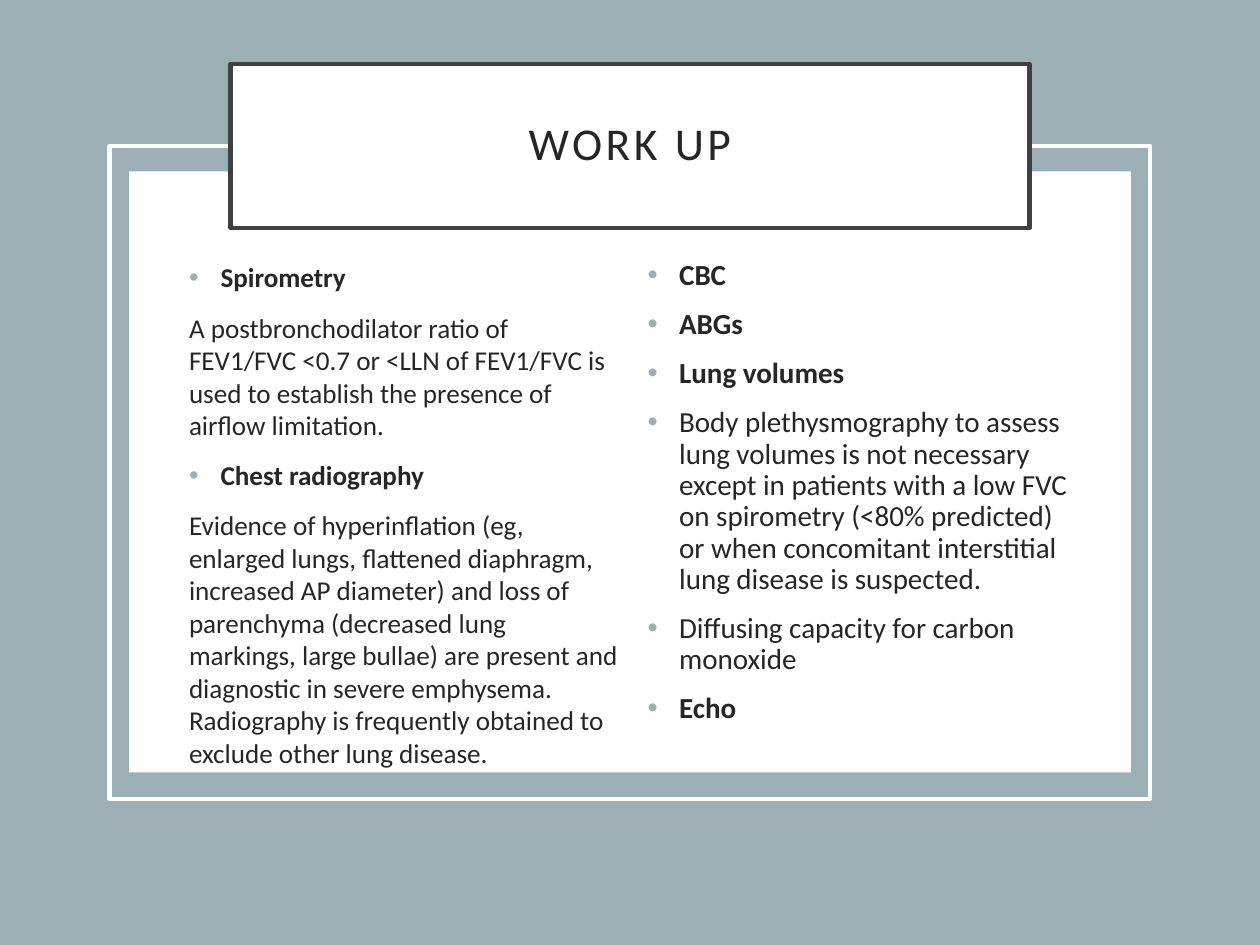
from lxml.etree import SubElement
from pptx import Presentation
from pptx.dml.color import RGBColor
from pptx.enum.shapes import MSO_SHAPE
from pptx.enum.text import MSO_ANCHOR, MSO_AUTO_SIZE, PP_ALIGN
from pptx.oxml.ns import qn
from pptx.util import Inches, Pt

COLORS = {"slate": "9BAFB5", "white": "FFFFFF", "border": "404040", "ink": "262626"}
FONT = "Calibri"
WIDTH, HEIGHT = 10, 7.5
TITLE = "WORK UP"
COLUMNS = [
    {"size": 15.5, "spacing": 1.0, "items": [
        ("Spirometry", True, True),
        ("A postbronchodilator ratio of FEV1/FVC <0.7 or <LLN of FEV1/FVC is used to "
         "establish the presence of airflow limitation.", False, False),
        ("Chest radiography", True, True),
        ("Evidence of hyperinflation (eg, enlarged lungs, flattened diaphragm, increased AP "
         "diameter) and loss of parenchyma (decreased lung markings, large bullae) are present "
         "and diagnostic in severe emphysema. Radiography is frequently obtained to exclude "
         "other lung disease.", False, False),
    ]},
    {"size": 16.6, "spacing": 0.9, "items": [
        ("CBC", True, True),
        ("ABGs", True, True),
        ("Lung volumes", True, True),
        ("Body plethysmography to assess lung volumes is not necessary except in patients with "
         "a low FVC on spirometry (<80% predicted) or when concomitant interstitial lung "
         "disease is suspected.", False, True),
        ("Diffusing capacity for carbon monoxide", False, True),
        ("Echo", True, True),
    ]},
]
COLUMN_LEFT, COLUMN_TOP, COLUMN_WIDTH, COLUMN_HEIGHT, GUTTER = 1.4, 2.02, 3.6, 4.12, 0.04
PANELS = [
    (WIDTH, 0, HEIGHT, "slate", None),
    (7.95, 1.36, 4.77, "white", None),
    (8.26, 1.16, 5.18, None, "white"),
]


def color(name):
    return RGBColor.from_string(COLORS[name])


def place(shape, left, top, width, height):
    shape.left, shape.top = Inches(left), Inches(top)
    shape.width, shape.height = Inches(width), Inches(height)


def paint(shape, fill, line):
    if fill:
        shape.fill.solid()
        shape.fill.fore_color.rgb = color(fill)
    else:
        shape.fill.background()
    if line:
        shape.line.color.rgb = color(line)
        shape.line.width = Pt(2.5)
    else:
        shape.line.fill.background()


def style(para, size, bold):
    for span in para.runs:
        span.font.name = FONT
        span.font.size = Pt(size)
        span.font.bold = bold
        span.font.color.rgb = color("ink")


def set_bullet(para, bulleted):
    props = para._p.get_or_add_pPr()
    indent = Inches(0.25) if bulleted else 0
    props.set("marL", str(indent))
    props.set("indent", str(-indent))
    if not bulleted:
        SubElement(props, qn("a:buNone"))
        return
    tint = SubElement(props, qn("a:buClr"))
    SubElement(tint, qn("a:srgbClr")).set("val", COLORS["slate"])
    SubElement(props, qn("a:buFont")).set("typeface", "Arial")
    SubElement(props, qn("a:buChar")).set("char", "•")


def add_panels(page):
    for width, top, height, fill, line in PANELS:
        panel = page.shapes.add_shape(
            MSO_SHAPE.RECTANGLE, Inches((WIDTH - width) / 2), Inches(top),
            Inches(width), Inches(height))
        panel.shadow.inherit = False
        paint(panel, fill, line)
        page.shapes.title.element.addprevious(panel.element)


def fill_title(title):
    place(title, 1.83, 0.51, 6.34, 1.3)
    paint(title, "white", "border")
    frame = title.text_frame
    frame.text = TITLE
    frame.auto_size = MSO_AUTO_SIZE.NONE
    frame.word_wrap = True
    frame.vertical_anchor = MSO_ANCHOR.MIDDLE
    frame.margin_left = frame.margin_right = Inches(0.2)
    frame.margin_top = frame.margin_bottom = Inches(0.2)
    para = frame.paragraphs[0]
    para.alignment = PP_ALIGN.CENTER
    para.line_spacing = 0.9
    style(para, 26, False)
    para.runs[0].font._element.set("spc", "200")


def fill_column(box, number, column):
    left = COLUMN_LEFT + number * (COLUMN_WIDTH + GUTTER)
    place(box, left, COLUMN_TOP, COLUMN_WIDTH, COLUMN_HEIGHT)
    frame = box.text_frame
    frame.text = "\n".join(text for text, _, _ in column["items"])
    frame.auto_size = MSO_AUTO_SIZE.NONE
    frame.word_wrap = True
    frame.vertical_anchor = MSO_ANCHOR.TOP
    for para, (_, bold, bulleted) in zip(frame.paragraphs, column["items"]):
        para.alignment = PP_ALIGN.LEFT
        para.line_spacing = column["spacing"]
        para.space_before = Pt(10)
        style(para, column["size"], bold)
        set_bullet(para, bulleted)


def main():
    deck = Presentation()
    deck.slide_width, deck.slide_height = Inches(WIDTH), Inches(HEIGHT)
    page = deck.slides.add_slide(deck.slide_layouts.get_by_name("Two Content"))
    add_panels(page)
    fill_title(page.shapes.title)
    for number, column in enumerate(COLUMNS):
        fill_column(page.placeholders[number + 1], number, column)
    deck.save("out.pptx")


if __name__ == "__main__":
    main()
